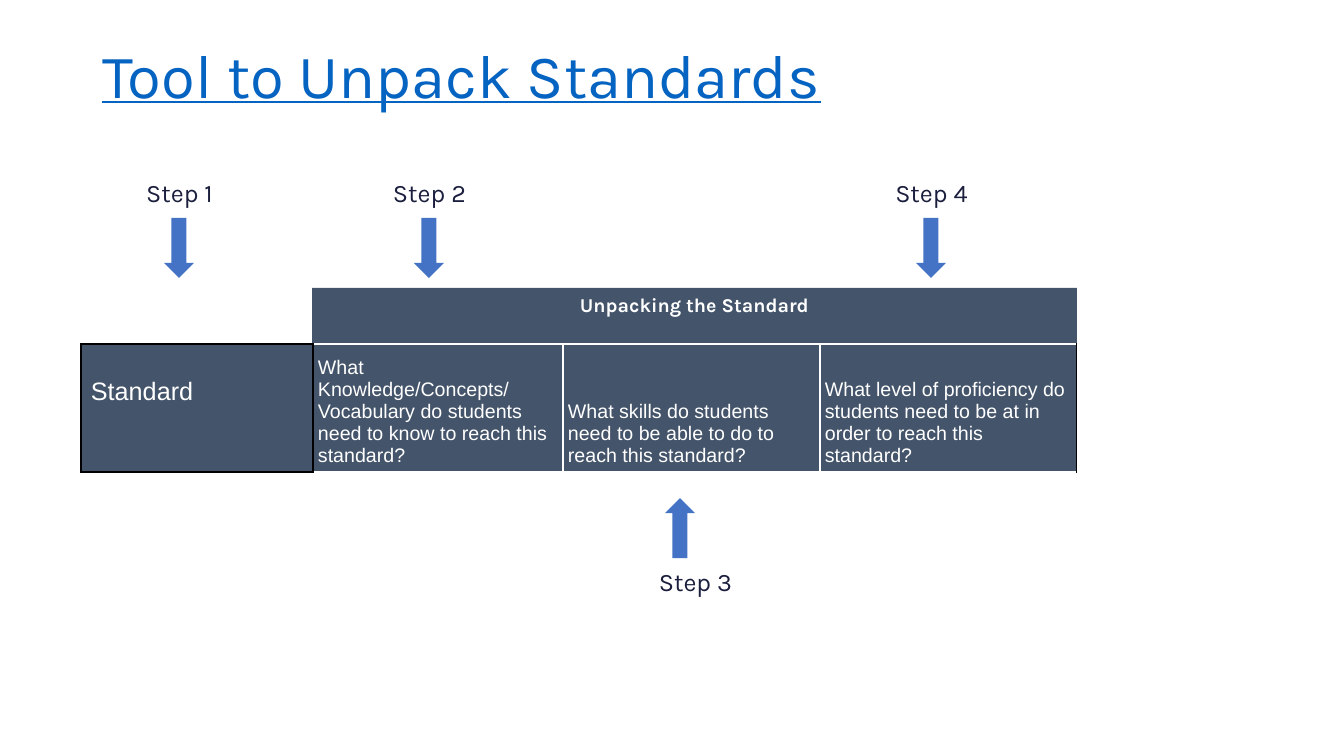
from dataclasses import dataclass

from lxml import etree
from pptx import Presentation
from pptx import util as u
from pptx.dml.color import RGBColor
from pptx.enum import shapes, text
from pptx.oxml import ns

SCALE = 914400 / 100.8


def px(num):
    return u.Emu(round(num * SCALE))


@dataclass(frozen=True)
class Theme:
    link: str = "0563C1"
    ink: str = "1B1E3D"
    arrow: str = "4472C4"
    slate: str = "44546A"
    white: str = "FFFFFF"
    black: str = "000000"
    head: str = "Karla"
    body: str = "Arial"
    title: int = 44
    step: int = 18
    cell: int = 14


def write(frame, words, *, size, color, font, align=text.PP_ALIGN.LEFT,
          anchor=text.MSO_ANCHOR.TOP, bold=False, under=False, lead=1.0):
    frame.word_wrap = True
    frame.vertical_anchor = anchor
    para = frame.paragraphs[0]
    para.alignment = align
    para.line_spacing = lead
    run = para.add_run()
    run.text = words
    run.font.name = font
    run.font.size = u.Pt(size)
    run.font.bold = bold
    run.font.underline = under
    run.font.color.rgb = RGBColor.from_string(color)


def edge(cell, dark, theme):
    """Draw the four borders: black on the sides named in dark, white elsewhere."""
    props = cell._tc.get_or_add_tcPr()
    for side in "LRTB":
        line = etree.SubElement(props, ns.qn(f"a:ln{side}"), w=str(u.Pt(1)))
        fill = etree.SubElement(line, ns.qn("a:solidFill"))
        color = theme.black if side in dark else theme.white
        etree.SubElement(fill, ns.qn("a:srgbClr"), val=color)


class Board:
    def __init__(self, slide, theme):
        self.slide = slide
        self.theme = theme

    def title(self, words, *box):
        shape = self.slide.shapes.title
        shape.left, shape.top, shape.width, shape.height = map(px, box)
        shape.text_frame.auto_size = text.MSO_AUTO_SIZE.NONE
        write(shape.text_frame, words, size=self.theme.title,
              color=self.theme.link, font=self.theme.head, under=True, lead=0.9)

    def label(self, words, *box):
        shape = self.slide.shapes.add_textbox(*map(px, box))
        write(shape.text_frame, words, size=self.theme.step, color=self.theme.ink,
              font=self.theme.head, align=text.PP_ALIGN.CENTER)

    def form(self, kind, color, *box):
        shape = self.slide.shapes.add_shape(kind, *map(px, box))
        shape.shadow.inherit = False
        shape.fill.solid()
        shape.fill.fore_color.rgb = RGBColor.from_string(color)
        shape.line.fill.background()
        return shape

    def arrow(self, left, top, turn=0):
        kind = shapes.MSO_SHAPE.DOWN_ARROW
        self.form(kind, self.theme.arrow, left, top, 30, 60).rotation = turn

    def band(self, words, *box):
        shape = self.form(shapes.MSO_SHAPE.RECTANGLE, self.theme.slate, *box)
        write(shape.text_frame, words, size=self.theme.cell, color=self.theme.white,
              font=self.theme.head, align=text.PP_ALIGN.CENTER, bold=True)

    def table(self, left, top, high, cols):
        """Build a one-row table; each column is (width, black sides, words)."""
        wide = sum(col[0] for col in cols)
        grid = self.slide.shapes.add_table(
            1, len(cols), *map(px, (left, top, wide, high))).table
        grid.first_row = grid.horz_banding = False
        for spot, (width, dark, words) in enumerate(cols):
            grid.columns[spot].width = px(width)
            cell = grid.cell(0, spot)
            edge(cell, dark, self.theme)
            cell.fill.solid()
            cell.fill.fore_color.rgb = RGBColor.from_string(self.theme.slate)
            first = spot == 0
            cell.margin_left = cell.margin_right = px(10 if first else 5)
            cell.margin_top = px(34 if first else 5)
            cell.margin_bottom = px(5)
            write(cell.text_frame, words, color=self.theme.white, font=self.theme.body,
                  size=self.theme.step if first else self.theme.cell)
            cell.vertical_anchor = (text.MSO_ANCHOR.TOP if first
                                    else text.MSO_ANCHOR.BOTTOM)


# Label left, label top, arrow left, arrow top, arrow turn
STEPS = [
    (129, 172, 164, 218, 0),
    (379, 172, 414, 218, 0),
    (645, 561, 665, 498, 180),
    (881, 172, 916, 218, 0),
]

COLS = [
    (232, "LRTB", "Standard"),
    (250, "L", "What Knowledge/Concepts/ Vocabulary do students "
               "need to know to reach this standard?"),
    (257, "", "What skills do students need to be able to do to reach this standard?"),
    (257, "R", "What level of proficiency do students need to be at "
               "in order to reach this standard?"),
]


def main():
    deck = Presentation()
    deck.slide_width, deck.slide_height = px(1344), px(756)
    board = Board(deck.slides.add_slide(deck.slide_layouts[5]), Theme())
    board.title("Tool to Unpack Standards", 92, 40, 1159, 146)
    for count, (left, top, tip, high, turn) in enumerate(STEPS, 1):
        board.label(f"Step {count}", left, top, 101, 40)
        board.arrow(tip, high, turn)
    board.band("Unpacking the Standard", 312, 288, 765, 57)
    board.table(81, 344, 128, COLS)
    deck.save("out.pptx")


if __name__ == "__main__":
    main()
